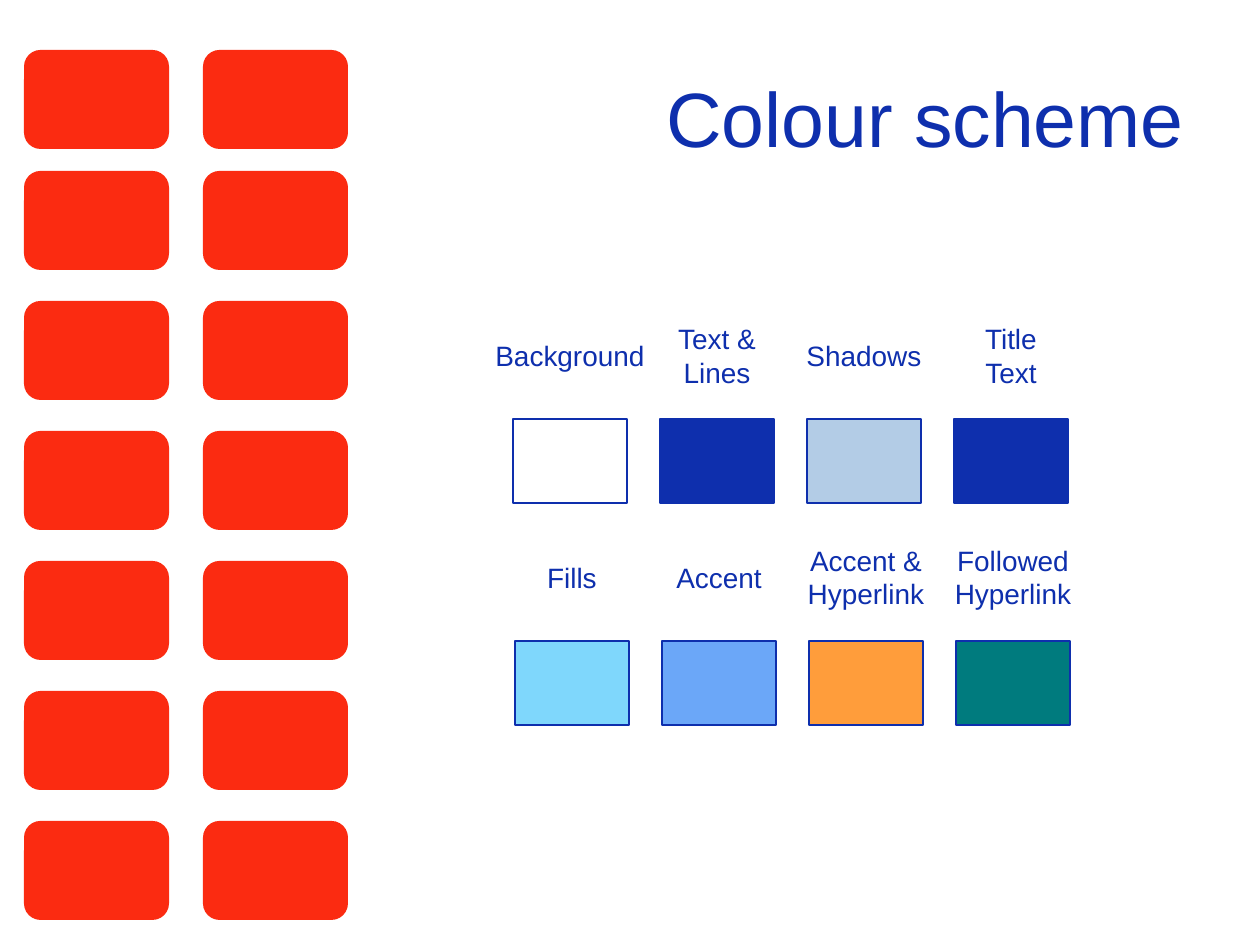
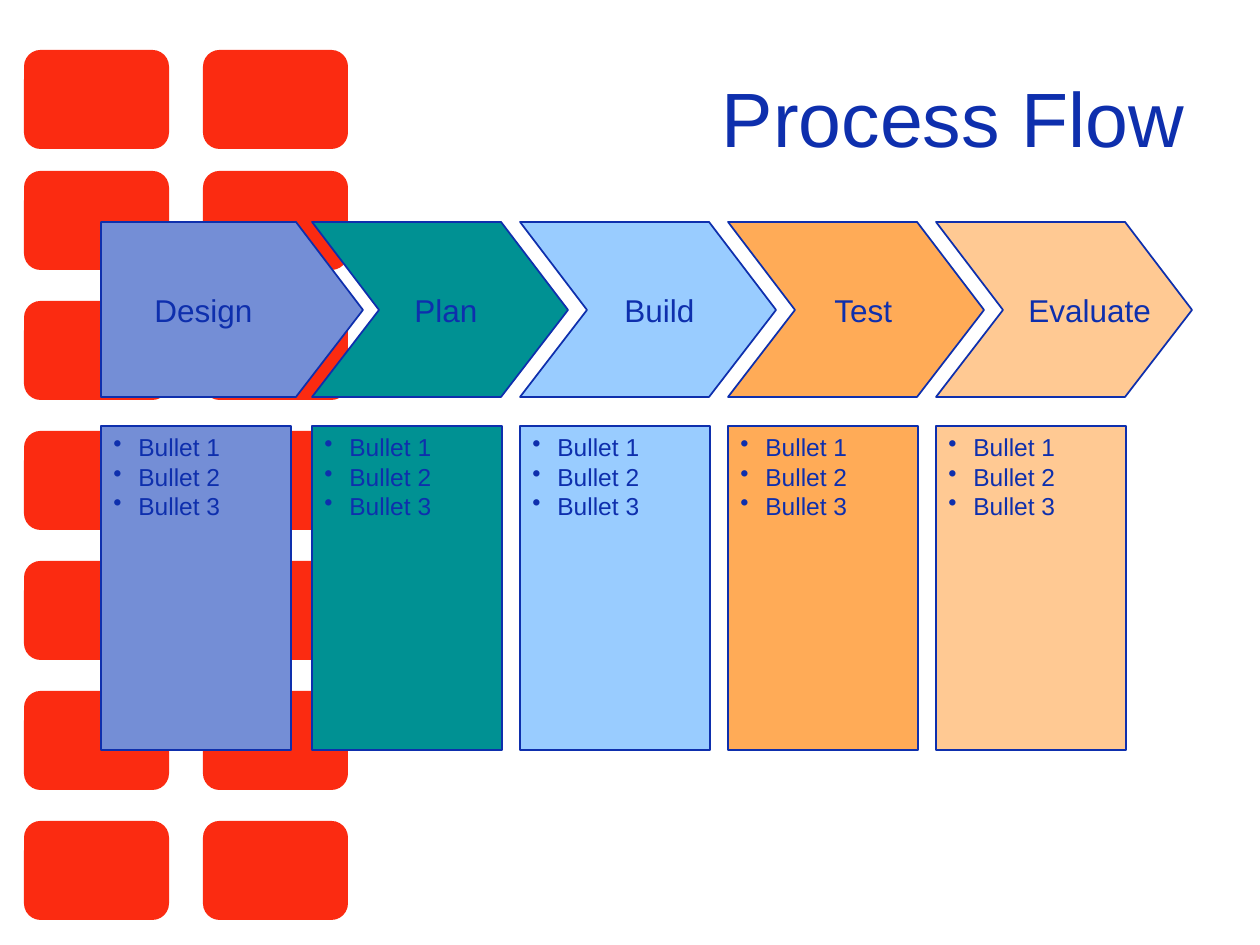
import dataclasses

import lxml.etree
import pptx
import pptx.dml.color
import pptx.enum.shapes
import pptx.enum.text
import pptx.oxml.ns
import pptx.util

EMU_PER_PX = 914400 / 126
ALIGN = pptx.enum.text.PP_ALIGN
ANCHOR = pptx.enum.text.MSO_ANCHOR
SHAPE = pptx.enum.shapes.MSO_SHAPE


@dataclasses.dataclass(frozen=True)
class Theme:
    """Colours, font and type sizes shared by all slides."""
    font: str = "Arial"
    ink: str = "0E2FAD"
    block: str = "FB2B11"
    title_size: int = 44
    step_size: int = 18
    label_size: int = 16
    bullet_size: int = 14
    swatch_line: float = 0.75
    step_line: float = 1


THEME = Theme()

SWATCH_ROWS = [
    (513, 419, [("Background", "FFFFFF"), ("Text &\nLines", THEME.ink),
                ("Shadows", "B3CCE6"), ("Title\nText", THEME.ink)]),
    (515, 641, [("Fills", "7FD7FC"), ("Accent", "6BA7F8"),
                ("Accent &\nHyperlink", "FF9D3B"),
                ("Followed\nHyperlink", "007B7E")]),
]

STEPS = [
    ("Design", "748ED6", 41),
    ("Plan", "009193", 90),
    ("Build", "99CCFF", 92),
    ("Test", "FFAB57", 94),
    ("Evaluate", "FFC993", 80),
]
BULLETS = "Bullet 1\nBullet 2\nBullet 3"


def px(length):
    """Turn a length in px into EMU."""
    return pptx.util.Emu(round(length * EMU_PER_PX))


def rgb(colour):
    """Turn a hex string into a colour."""
    return pptx.dml.color.RGBColor.from_string(colour)


def paint(shape, fill, line_width=None):
    """Give a shape a flat fill and either an ink outline or none."""
    shape.shadow.inherit = False
    shape.fill.solid()
    shape.fill.fore_color.rgb = rgb(fill)
    if line_width is None:
        shape.line.fill.background()
    else:
        shape.line.color.rgb = rgb(THEME.ink)
        shape.line.width = pptx.util.Pt(line_width)


def add_bullet(paragraph, indent=25):
    """Give a paragraph a round bullet with a hanging indent."""
    properties = paragraph._p.get_or_add_pPr()
    properties.set("marL", str(px(indent)))
    properties.set("indent", str(-px(indent)))
    bullet = lxml.etree.SubElement(properties, pptx.oxml.ns.qn("a:buChar"))
    bullet.set("char", "•")


def write_text(shape, text, *, size, align=ALIGN.LEFT, anchor=ANCHOR.MIDDLE,
               bulleted=False):
    """Write text into a shape, one paragraph per line."""
    frame = shape.text_frame
    frame.word_wrap = True
    frame.vertical_anchor = anchor
    frame.text = text
    for paragraph in frame.paragraphs:
        paragraph.alignment = align
        if bulleted:
            add_bullet(paragraph)
        for run in paragraph.runs:
            run.font.name = THEME.font
            run.font.size = pptx.util.Pt(size)
            run.font.color.rgb = rgb(THEME.ink)


def add_box(slide, kind, left, top, width, height, fill, line_width=None):
    """Add a painted preset shape."""
    shape = slide.shapes.add_shape(kind, px(left), px(top), px(width), px(height))
    paint(shape, fill, line_width)
    return shape


def add_label(slide, text, left, top, width, height, **text_format):
    """Add a text box with formatted text."""
    box = slide.shapes.add_textbox(px(left), px(top), px(width), px(height))
    write_text(box, text, **text_format)


def add_arrow(slide, left, top, shoulder, fill, notched, height=175, point=67):
    """Add a process arrow, with a notch at its tail if asked."""
    right, middle, bottom = left + shoulder, top + height / 2, top + height
    points = [(right, top), (right + point, middle), (right, bottom), (left, bottom)]
    if notched:
        points.append((left + point, middle))
    builder = slide.shapes.build_freeform(left, top, scale=EMU_PER_PX)
    builder.add_line_segments(points, close=True)
    paint(builder.convert_to_shape(), fill, THEME.step_line)


def add_slide(presentation, layout, title):
    """Add a slide with a right-aligned title."""
    slide = presentation.slides.add_slide(layout)
    shape = slide.shapes.title
    shape.left, shape.top, shape.width, shape.height = map(px, (63, 38, 1134, 158))
    write_text(shape, title, size=THEME.title_size, align=ALIGN.RIGHT)
    return slide


def add_block_band(slide, layout):
    """Draw the two columns of blocks and hand them to the layout."""
    tops = [50] + [171 + 130 * row for row in range(6)]
    for left in (24, 203):
        for top in tops:
            block = add_box(slide, SHAPE.ROUNDED_RECTANGLE, left, top, 145, 99,
                            THEME.block)
            layout.shapes.element.append(block.element)


def add_swatches(slide, pitch=147, width=114, height=84, label_width=190):
    """Add the rows of labelled colour swatches."""
    for first_left, top, swatches in SWATCH_ROWS:
        for column, (name, colour) in enumerate(swatches):
            left = first_left + pitch * column
            add_box(slide, SHAPE.RECTANGLE, left, top, width, height, colour,
                    THEME.swatch_line)
            add_label(slide, name, left + (width - label_width) / 2, top - 104,
                      label_width, 80, size=THEME.label_size, align=ALIGN.CENTER)


def add_process(slide):
    """Add the arrows of the process with a list under each."""
    for index, (name, colour, label_offset) in enumerate(STEPS):
        notched = index > 0
        left = 104 + 208 * index if notched else 101
        add_arrow(slide, left, 222, 189 if notched else 195, colour, notched)
        add_label(slide, name, left + label_offset, 285, 150, 50,
                  size=THEME.step_size)
        panel = add_box(slide, SHAPE.RECTANGLE, left, 426, 190, 324, colour,
                        THEME.step_line)
        write_text(panel, BULLETS, size=THEME.bullet_size, anchor=ANCHOR.TOP,
                   bulleted=True)


def main():
    """Build and save the two slides."""
    presentation = pptx.Presentation()
    presentation.slide_width, presentation.slide_height = px(1260), px(945)
    layout = presentation.slide_layouts.get_by_name("Title Only")
    colour_slide = add_slide(presentation, layout, "Colour scheme")
    add_block_band(colour_slide, layout)
    add_swatches(colour_slide)
    add_process(add_slide(presentation, layout, "Process Flow"))
    presentation.save("out.pptx")


if __name__ == "__main__":
    main()
